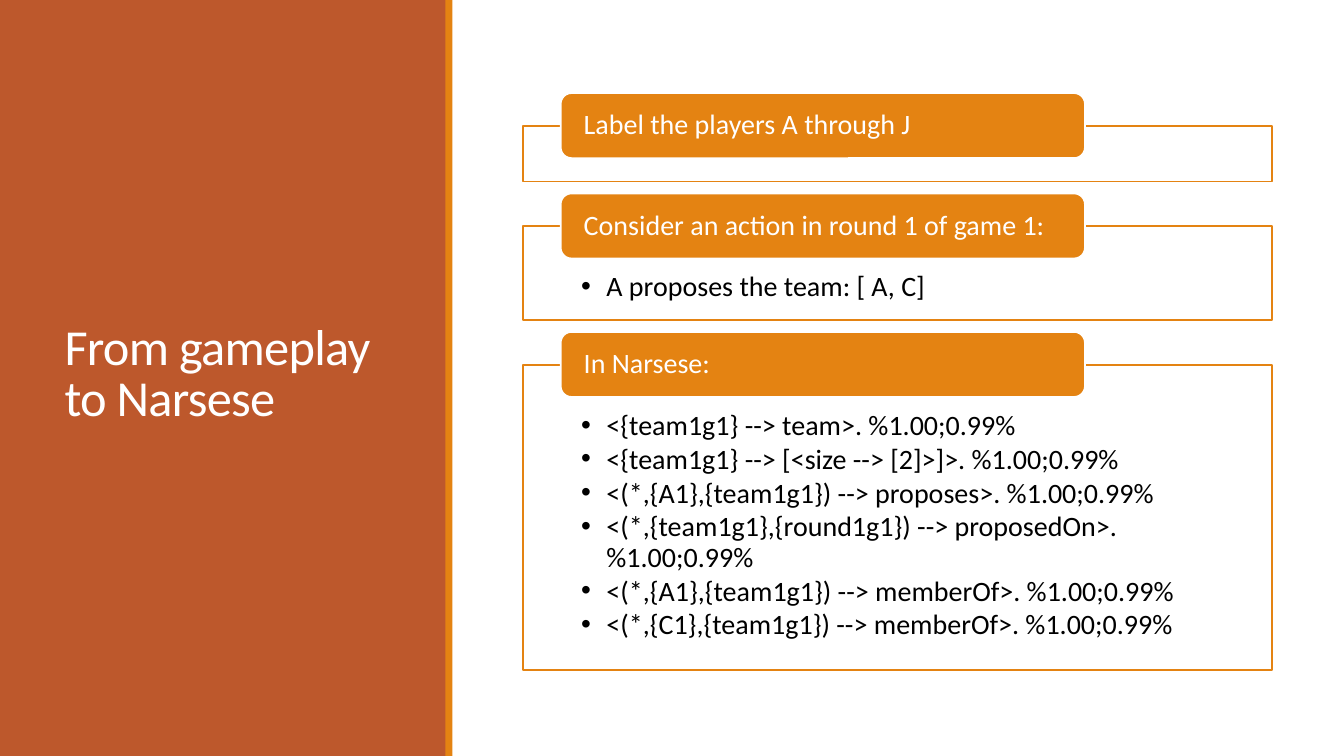
from lxml.etree import SubElement
from pptx import Presentation
from pptx.dml.color import RGBColor
from pptx.enum.shapes import MSO_SHAPE
from pptx.enum.text import MSO_ANCHOR, PP_ALIGN
from pptx.oxml.ns import qn
from pptx.util import Pt

TITLE = "From gameplay to Narsese"
# heading, frame height, bullets
SECTIONS = [
    ("Label the players A through J", 39.7, []),
    ("Consider an action in round 1 of game 1:", 66.9, ["A proposes the team: [ A, C]"]),
    ("In Narsese:", 218, [
        "<{team1g1} --> team>. %1.00;0.99%",
        "<{team1g1} --> [<size --> [2]>]>. %1.00;0.99%",
        "<(*,{A1},{team1g1}) --> proposes>. %1.00;0.99%",
        "<(*,{team1g1},{round1g1}) --> proposedOn>. %1.00;0.99%",
        "<(*,{A1},{team1g1}) --> memberOf>. %1.00;0.99%",
        "<(*,{C1},{team1g1}) --> memberOf>. %1.00;0.99%",
    ]),
]
RUST, ORANGE, WHITE, BLACK = "BD582C", "E48312", "FFFFFF", "000000"
FRAME_LEFT, FRAME_WIDTH, FIRST_TOP, FRAME_GAP = 373.7, 535, 90, 32
TAB_LEFT, TAB_WIDTH, TAB_HEIGHT, TAB_RISE = 400.5, 374.5, 46.5, 23.5


def color(value):
    return RGBColor.from_string(value)


def add_block(page, kind, left, top, width, height, fill, line=None):
    block = page.shapes.add_shape(kind, Pt(left), Pt(top), Pt(width), Pt(height))
    block.shadow.inherit = False
    block.fill.solid()
    block.fill.fore_color.rgb = color(fill)
    if line:
        block.line.color.rgb = color(line)
        block.line.width = Pt(1.25)
    else:
        block.line.fill.background()
    return block


def set_frame(box, anchor, left, top, right, bottom):
    frame = box.text_frame
    frame.word_wrap = True
    frame.vertical_anchor = anchor
    frame.margin_left, frame.margin_top = Pt(left), Pt(top)
    frame.margin_right, frame.margin_bottom = Pt(right), Pt(bottom)
    return frame


def write(para, text, size, text_color, line_spacing=0.9):
    para.alignment = PP_ALIGN.LEFT
    para.line_spacing = line_spacing
    span = para.add_run()
    span.text = text
    span.font.name = "Calibri"
    span.font.size = Pt(size)
    span.font.color.rgb = color(text_color)
    return span


def add_bullet(para):
    properties = para._p.get_or_add_pPr()
    properties.set("marL", str(Pt(18)))
    properties.set("indent", str(-Pt(18)))
    SubElement(properties, qn("a:buFont")).set("typeface", "Arial")
    SubElement(properties, qn("a:buChar")).set("char", "•")


def add_section(page, top, heading, height, bullets):
    frame_box = add_block(page, MSO_SHAPE.RECTANGLE, FRAME_LEFT, top,
                          FRAME_WIDTH, height, WHITE, ORANGE)
    if bullets:
        frame = set_frame(frame_box, MSO_ANCHOR.TOP, 41.5, 33, 41.5, 11.5)
        for index, bullet in enumerate(bullets):
            para = frame.add_paragraph() if index else frame.paragraphs[0]
            write(para, bullet, 20, BLACK)
            para.space_after = Pt(2.6)
            add_bullet(para)
    tab = add_block(page, MSO_SHAPE.ROUNDED_RECTANGLE, TAB_LEFT, top - TAB_RISE,
                    TAB_WIDTH, TAB_HEIGHT, ORANGE, WHITE)
    frame = set_frame(tab, MSO_ANCHOR.MIDDLE, 14.2, 0, 14.2, 0)
    write(frame.paragraphs[0], heading, 20, WHITE)


def main():
    deck = Presentation()
    deck.slide_width, deck.slide_height = Pt(960), Pt(540)
    page = deck.slides.add_slide(deck.slide_layouts[6])

    add_block(page, MSO_SHAPE.RECTANGLE, 0, 0, 319, 540, RUST)
    add_block(page, MSO_SHAPE.RECTANGLE, 318.2, 0, 5, 540, ORANGE)
    title = page.shapes.add_textbox(Pt(39), Pt(41), Pt(242.5), Pt(454.5))
    frame = set_frame(title, MSO_ANCHOR.MIDDLE, 7.2, 3.6, 7.2, 3.6)
    span = write(frame.paragraphs[0], TITLE, 36, WHITE, 0.85)
    span.font._element.set("spc", "-50")

    top = FIRST_TOP
    for heading, height, bullets in SECTIONS:
        add_section(page, top, heading, height, bullets)
        top += height + FRAME_GAP
    deck.save("out.pptx")


if __name__ == "__main__":
    main()
